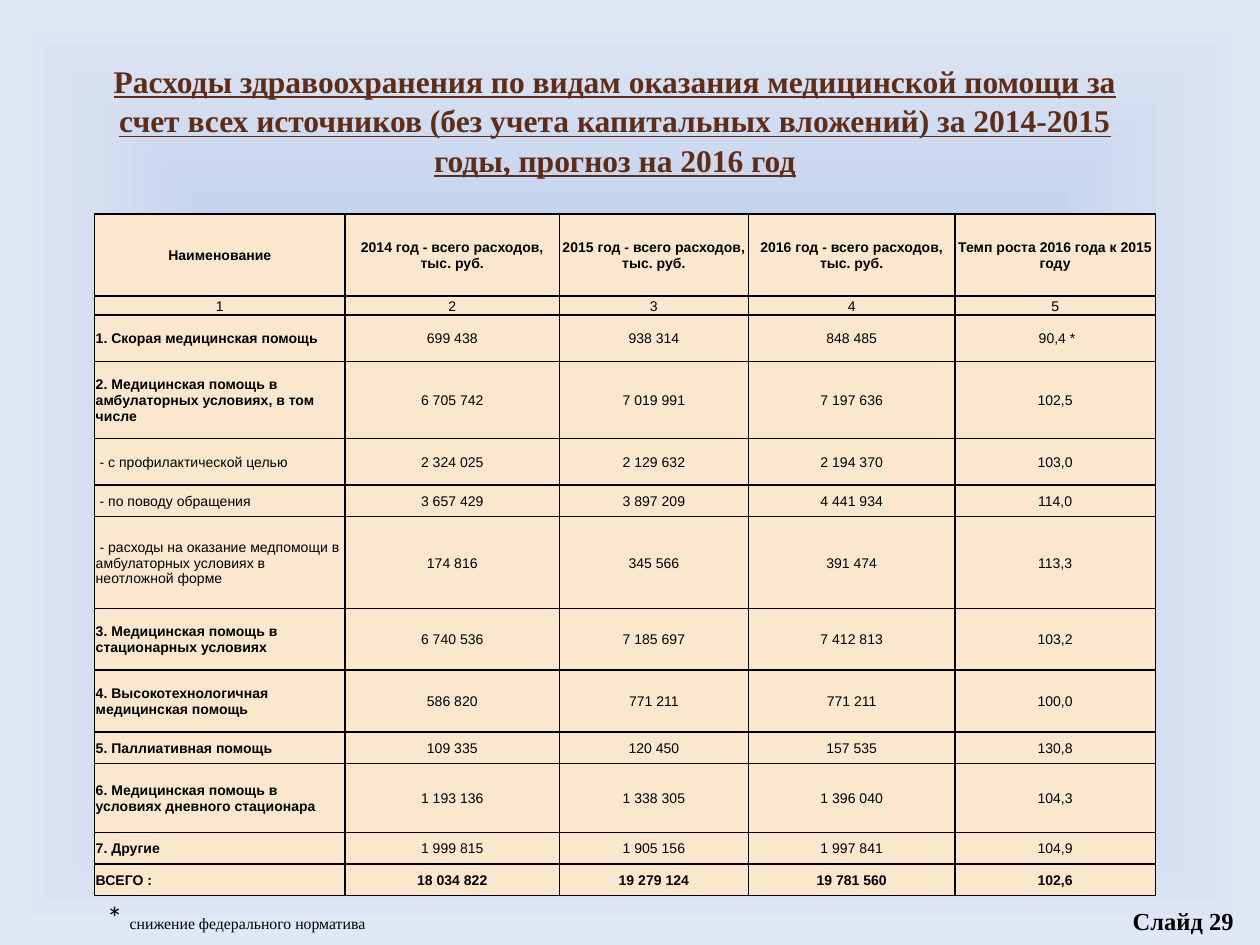
from lxml import etree
from pptx import Presentation
from pptx import util as u
from pptx.dml.color import RGBColor
from pptx.enum import text
from pptx.oxml import parse_xml
from pptx.oxml.ns import nsdecls

W, H = 10, 7.5
MARGIN = 0.75
SERIF, SANS = "Times New Roman", "Arial"
BLACK, BROWN, CREAM = "000000", "5F2C16", "FBE6CE"
BACKDROP = [(0, "DBEEF4"), (50, "C2D1ED"), (100, "E1E8F5")]
COLS = [1.99, 1.7, 1.5, 1.64, 1.59]
HEADER = [
    "Наименование",
    "2014 год - всего расходов, тыс. руб.",
    "2015 год - всего расходов, тыс. руб.",
    "2016 год - всего расходов, тыс. руб.",
    "Темп роста 2016 года к 2015 году",
]
ROWS = [
    (0.65, HEADER),
    (0.15, ["1", "2", "3", "4", "5"]),
    (0.37, ["1. Скорая медицинская помощь", "699 438", "938 314", "848 485", " 90,4 *"]),
    (0.61, ["2. Медицинская помощь в амбулаторных условиях, в том числе",
            "6 705 742", "7 019 991", "7 197 636", "102,5"]),
    (0.37, [" - с профилактической целью", "2 324 025", "2 129 632", "2 194 370", "103,0"]),
    (0.25, [" - по поводу обращения", "3 657 429", "3 897 209", "4 441 934", "114,0"]),
    (0.73, [" - расходы на оказание медпомощи в амбулаторных условиях в неотложной форме",
            "174 816", "345 566", "391 474", "113,3"]),
    (0.49, ["3. Медицинская помощь в стационарных условиях",
            "6 740 536", "7 185 697", "7 412 813", "103,2"]),
    (0.49, ["4. Высокотехнологичная медицинская помощь",
            "586 820", "771 211", "771 211", "100,0"]),
    (0.25, ["5. Паллиативная помощь", "109 335", "120 450", "157 535", "130,8"]),
    (0.55, ["6. Медицинская помощь в условиях дневного стационара",
            "1 193 136", "1 338 305", "1 396 040", "104,3"]),
    (0.25, ["7. Другие", "1 999 815", "1 905 156", "1 997 841", "104,9"]),
    (0.25, ["ВСЕГО :", "18 034 822", "19 279 124", "19 781 560", "102,6"]),
]


def rgb(value):
    return RGBColor.from_string(value)


def style(r, size, font, color=BLACK, bold=False, underline=False):
    f = r.font
    f.size, f.name, f.bold = u.Pt(size), font, bold
    f.color.rgb = rgb(color)
    if underline:
        f.underline = True


def set_background(s):
    stops = "".join(
        f'<a:gs pos="{pos * 1000}"><a:srgbClr val="{color}"/></a:gs>'
        for pos, color in BACKDROP
    )
    bg = parse_xml(
        f'<p:bg {nsdecls("p", "a")}><p:bgPr><a:gradFill rotWithShape="1">'
        f'<a:gsLst>{stops}</a:gsLst><a:path path="rect">'
        '<a:fillToRect l="50000" t="50000" r="50000" b="50000"/></a:path>'
        '</a:gradFill><a:effectLst/></p:bgPr></p:bg>'
    )
    s.element.cSld.insert(0, bg)


def add_text(s, box, runs, align=text.PP_ALIGN.LEFT, anchor=text.MSO_ANCHOR.TOP):
    sp = s.shapes.add_textbox(*(u.Inches(v) for v in box))
    tf = sp.text_frame
    tf.word_wrap = True
    tf.vertical_anchor = anchor
    p = tf.paragraphs[0]
    p.alignment = align
    for words, look in runs:
        r = p.add_run()
        r.text = words
        style(r, **look)
    return p


def add_borders(cell):
    pr = cell._tc.get_or_add_tcPr()
    for i, side in enumerate(("lnL", "lnR", "lnT", "lnB")):
        ln = parse_xml(
            f'<a:{side} {nsdecls("a")} w="{u.Pt(1)}"><a:solidFill>'
            f'<a:srgbClr val="{BLACK}"/></a:solidFill></a:{side}>'
        )
        pr.insert(i, ln)


def fill_cell(cell, words, bold, align):
    cell.fill.solid()
    cell.fill.fore_color.rgb = rgb(CREAM)
    cell.margin_left = cell.margin_right = cell.margin_top = u.Inches(0.01)
    cell.margin_bottom = 0
    cell.vertical_anchor = text.MSO_ANCHOR.MIDDLE
    p = cell.text_frame.paragraphs[0]
    p.text = words
    p.alignment = align
    style(p.runs[0], 8, SANS, bold=bold)
    add_borders(cell)


def add_costs_table(s, left, top):
    heights = [height for height, _ in ROWS]
    frame = s.shapes.add_table(
        len(ROWS), len(COLS), u.Inches(left), u.Inches(top),
        u.Inches(sum(COLS)), u.Inches(sum(heights)),
    )
    tbl = frame.table
    for col, width in zip(tbl.columns, COLS):
        col.width = u.Inches(width)
    for i, (height, words) in enumerate(ROWS):
        tbl.rows[i].height = u.Inches(height)
        for j, word in enumerate(words):
            is_name = j == 0 and i > 1
            bold = i in (0, len(ROWS) - 1) or (is_name and not word.startswith(" -"))
            align = text.PP_ALIGN.LEFT if is_name else text.PP_ALIGN.CENTER
            fill_cell(tbl.cell(i, j), word, bold, align)


def main():
    prs = Presentation()
    prs.slide_width, prs.slide_height = u.Inches(W), u.Inches(H)
    s = prs.slides.add_slide(prs.slide_layouts[6])
    set_background(s)
    title = add_text(
        s, (0.67, 0.67, sum(COLS), 0.8),
        [("Расходы здравоохранения по видам оказания медицинской помощи за счет всех "
          "источников (без учета капитальных вложений) за 2014-2015 годы, прогноз на 2016 год",
          dict(size=18, font=SERIF, color=BROWN, bold=True, underline=True))],
        text.PP_ALIGN.CENTER, text.MSO_ANCHOR.BOTTOM,
    )
    title.line_spacing = 1.05
    add_costs_table(s, MARGIN, 1.7)
    add_text(
        s, (MARGIN, 7.08, 6.93, 0.4),
        [("* ", dict(size=18, font="Calibri")),
         ("снижение федерального норматива", dict(size=9, font=SERIF))],
    )
    add_text(
        s, (8.39, 7.14, 1.5, 0.33),
        [("Слайд 29", dict(size=14, font=SERIF, bold=True))],
        text.PP_ALIGN.RIGHT,
    )
    prs.save("out.pptx")


if __name__ == "__main__":
    main()
